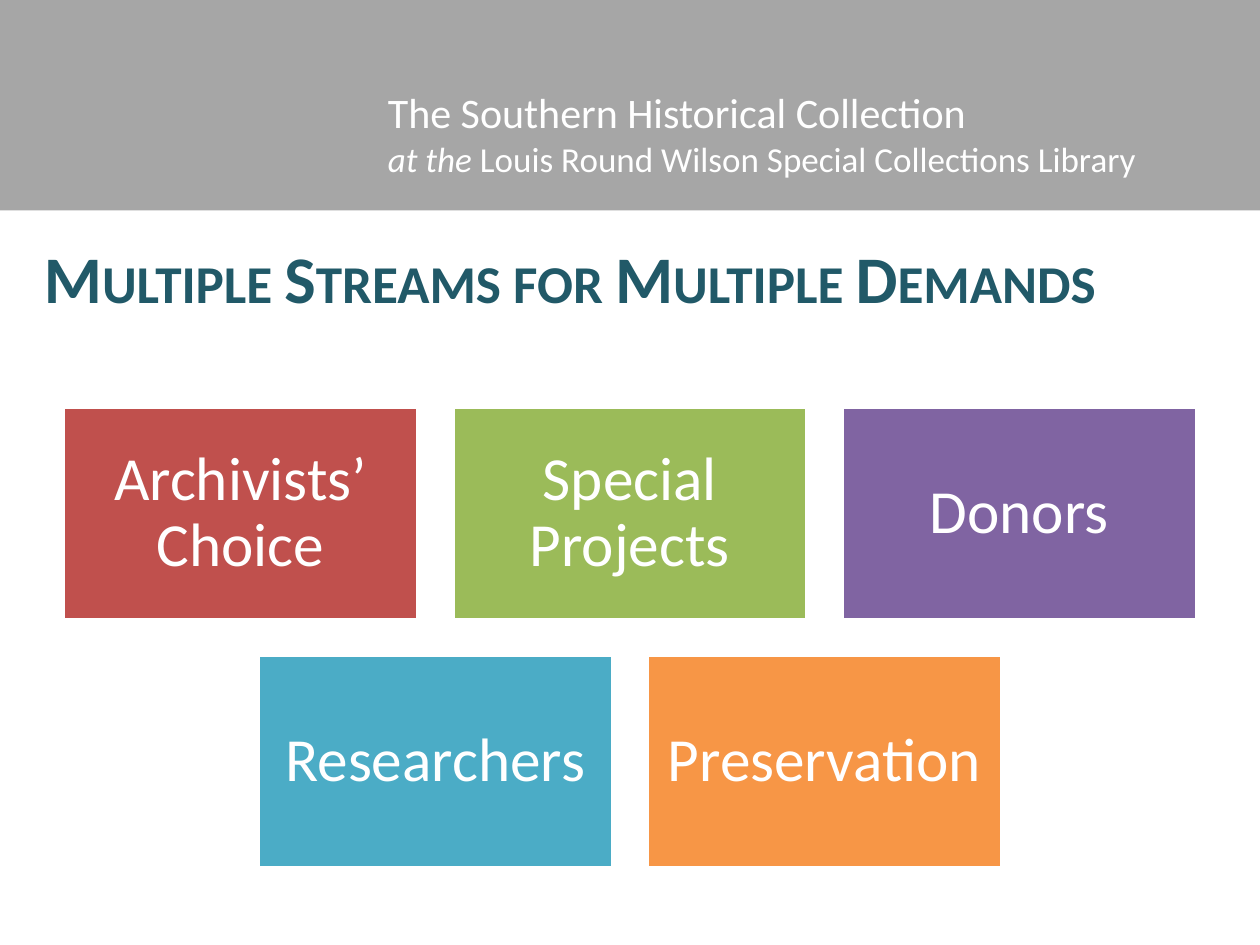
from pptx import Presentation
from pptx.dml.color import RGBColor
from pptx.enum.shapes import MSO_SHAPE as Shape
from pptx.enum.text import MSO_ANCHOR as Anchor, MSO_AUTO_SIZE as AutoSize, PP_ALIGN as Align
from pptx.util import Inches, Pt

SLIDE_WIDTH, SLIDE_HEIGHT = 10, 7.5
BOX_WIDTH, BOX_HEIGHT, GAP = 2.81, 1.69, 0.28
GRID_TOP = 3.23
STREAM_ROWS = [
    [("Archivists’ Choice", "C0504D"), ("Special Projects", "9BBB59"), ("Donors", "8064A2")],
    [("Researchers", "4BACC6"), ("Preservation", "F79646")],
]


def color(value):
    return RGBColor.from_string(value)


class SlideBuilder:
    font = "Calibri"
    white = "FFFFFF"
    gray = "A6A6A6"
    teal = "215968"

    def __init__(self, slide):
        self.slide = slide

    def style(self, run, size, fill, bold=False, italic=False, small_caps=False):
        run.font.name = self.font
        run.font.size = Pt(size)
        run.font.color.rgb = color(fill)
        run.font.bold = bold
        run.font.italic = italic
        if small_caps:
            run.font._element.set("cap", "small")

    def rectangle(self, left, top, width, height, fill):
        shape = self.slide.shapes.add_shape(
            Shape.RECTANGLE, Inches(left), Inches(top), Inches(width), Inches(height))
        shape.shadow.inherit = False
        shape.fill.solid()
        shape.fill.fore_color.rgb = color(fill)
        shape.line.fill.background()
        return shape

    def stream(self, left, top, label, fill):
        shape = self.rectangle(left, top, BOX_WIDTH, BOX_HEIGHT, fill)
        shape.line.color.rgb = color(self.white)
        shape.line.width = Pt(2)
        frame = shape.text_frame
        frame.text = label
        frame.word_wrap = True
        frame.vertical_anchor = Anchor.MIDDLE
        frame.margin_left = frame.margin_right = Inches(0.15)
        frame.margin_top = frame.margin_bottom = Inches(0.15)
        paragraph = frame.paragraphs[0]
        paragraph.alignment = Align.CENTER
        paragraph.line_spacing = 0.9
        self.style(paragraph.runs[0], 35, self.white)

    def text(self, left, top, width, height, lines):
        box = self.slide.shapes.add_textbox(
            Inches(left), Inches(top), Inches(width), Inches(height))
        frame = box.text_frame
        frame.word_wrap = True
        frame.auto_size = AutoSize.SHAPE_TO_FIT_TEXT
        for index, pieces in enumerate(lines):
            paragraph = frame.add_paragraph() if index else frame.paragraphs[0]
            for words, formatting in pieces:
                run = paragraph.add_run()
                run.text = words
                self.style(run, **formatting)


def main():
    presentation = Presentation()
    presentation.slide_width = Inches(SLIDE_WIDTH)
    presentation.slide_height = Inches(SLIDE_HEIGHT)
    builder = SlideBuilder(presentation.slides.add_slide(presentation.slide_layouts[6]))

    builder.rectangle(0, 0, SLIDE_WIDTH, 1.67, builder.gray)
    builder.text(2.98, 0.64, 7, 0.84, [
        [("The Southern Historical Collection", dict(size=24, fill=builder.white))],
        [("at the ", dict(size=20, fill=builder.white, italic=True)),
         ("Louis Round Wilson Special Collections Library", dict(size=20, fill=builder.white))],
    ])

    for row, streams in enumerate(STREAM_ROWS):
        row_width = len(streams) * (BOX_WIDTH + GAP) - GAP
        row_left = (SLIDE_WIDTH - row_width) / 2
        for column, (label, fill) in enumerate(streams):
            builder.stream(row_left + column * (BOX_WIDTH + GAP),
                           GRID_TOP + row * (BOX_HEIGHT + GAP), label, fill)

    builder.text(0.25, 1.83, 9.08, 0.74, [
        [("Multiple Streams for Multiple Demands",
          dict(size=38, fill=builder.teal, bold=True, small_caps=True))],
    ])
    presentation.save("out.pptx")


if __name__ == "__main__":
    main()
